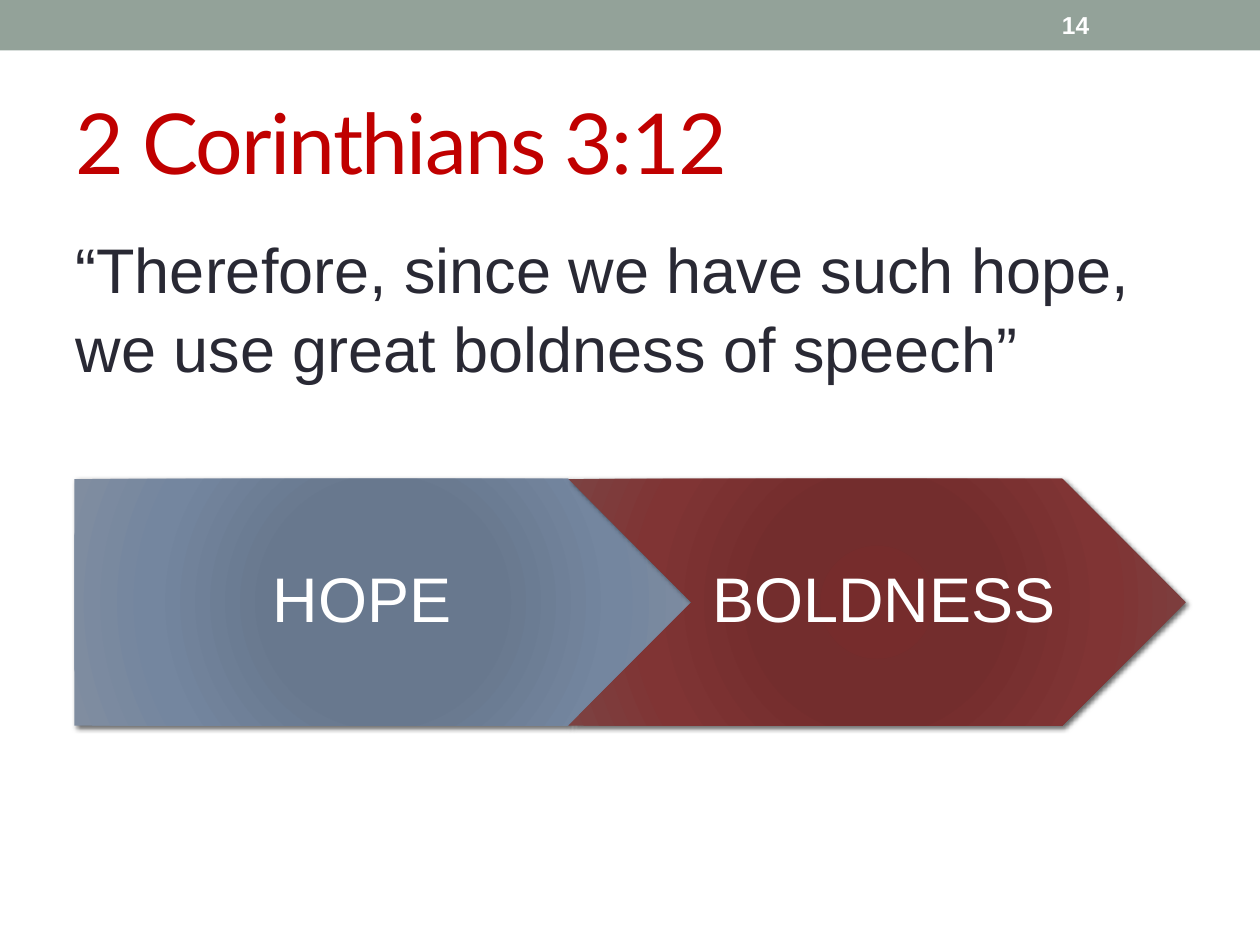
"""Build a scripture slide with a two-step arrow process."""
from dataclasses import dataclass

from lxml.etree import SubElement
from pptx import Presentation
from pptx.dml.color import RGBColor
from pptx.enum.shapes import MSO_SHAPE as Preset
from pptx.enum.text import MSO_ANCHOR as Anchor, PP_ALIGN as Align
from pptx.oxml import parse_xml
from pptx.oxml.ns import nsdecls, qn
from pptx.util import Inches, Pt


@dataclass(frozen=True)
class Theme:
    band: str = "93A299"
    title: str = "C00000"
    body: str = "292934"
    light: str = "FFFFFF"
    hope: tuple = ("677790", "68788E", "74869F", "808DA0")
    boldness: tuple = ("762C2C", "732D2D", "803434", "7C4242")
    stops: tuple = (0, 34, 70, 100)
    title_font: str = "Lato"
    font: str = "Arial"
    title_size: int = 48
    text_size: int = 36
    number_size: int = 14


THEME = Theme()
STEP_TOP, STEP_WIDTH, STEP_HEIGHT = 3.8, 4.9, 1.96


def place(shape, left, top, width, height):
    """Move and size a shape in inches."""
    box = {"left": left, "top": top, "width": width, "height": height}
    for name, value in box.items():
        setattr(shape, name, Inches(value))


def write(shape, text, size, color, font=THEME.font, bold=False,
          anchor=Anchor.MIDDLE, margins=(0.1, 0.05, 0.1, 0.05), **layout):
    """Put one formatted paragraph in a shape and return it."""
    frame = shape.text_frame
    frame.word_wrap = True
    frame.vertical_anchor = anchor
    for side, margin in zip(("left", "top", "right", "bottom"), margins):
        setattr(frame, f"margin_{side}", Inches(margin))
    paragraph = frame.paragraphs[0]
    for name, value in layout.items():
        setattr(paragraph, name, value)
    run = paragraph.add_run()
    run.text = text
    for name, value in {"name": font, "size": Pt(size), "bold": bold}.items():
        setattr(run.font, name, value)
    run.font.color.rgb = RGBColor.from_string(color)
    return paragraph


def add_text(shapes, box, *content, **formats):
    """Add a text box with one paragraph."""
    write(shapes.add_textbox(*map(Inches, box)), *content, **formats)


def add_band(slide):
    """Add the coloured band at the top with the slide number."""
    band = slide.shapes.add_shape(Preset.RECTANGLE, *map(Inches, (0, 0, 10, 0.4)))
    band.shadow.inherit = False
    band.fill.solid()
    band.fill.fore_color.rgb = RGBColor.from_string(THEME.band)
    band.line.fill.background()
    add_text(slide.shapes, (8.33, 0.02, 1.17, 0.36), "14",
             THEME.number_size, THEME.light, bold=True)


def add_title(slide, text):
    """Fill the title placeholder."""
    title = slide.shapes.title
    place(title, 0.5, 0.58, 9, 1.08)
    paragraph = write(title, text, THEME.title_size, THEME.title,
                      THEME.title_font, alignment=Align.LEFT)
    paragraph.runs[0].font._element.set("spc", "-100")


def add_verse(slide, text):
    """Fill the body placeholder with an unbulleted verse."""
    body = slide.placeholders[1]
    place(body, 0.5, 1.75, 9, 5.33)
    paragraph = write(body, text, THEME.text_size, THEME.body,
                      anchor=Anchor.TOP, line_spacing=1.05)
    properties = paragraph._p.get_or_add_pPr()
    for name in ("marL", "indent"):
        properties.set(name, "0")
    SubElement(properties, qn("a:buNone"))


def set_radial_fill(shape, colors):
    """Fill a shape with a circular gradient."""
    stops = "".join(
        f'<a:gs pos="{position * 1000}"><a:srgbClr val="{color}"/></a:gs>'
        for position, color in zip(THEME.stops, colors))
    sides = " ".join(f'{side}="100000"' for side in "ltrb")
    gradient = parse_xml(
        f'<a:gradFill {nsdecls("a")} rotWithShape="1"><a:gsLst>{stops}</a:gsLst>'
        f'<a:path path="circle"><a:fillToRect {sides}/></a:path></a:gradFill>')
    shape._element.spPr.find(qn("a:prstGeom")).addnext(gradient)


def set_shadow(shape):
    """Give a shape a soft shadow down and to the right."""
    shape.shadow.inherit = False
    shape._element.spPr.find(qn("a:effectLst")).append(parse_xml(
        f'<a:outerShdw {nsdecls("a")} blurRad="{Pt(3)}" dist="{Pt(2)}" '
        'dir="2700000" rotWithShape="0"><a:srgbClr val="000000">'
        '<a:alpha val="60000"/></a:srgbClr></a:outerShdw>'))


def add_step(group, preset, left, colors, text, text_left, text_width, inset):
    """Add one arrow of the process with its label."""
    arrow = group.shapes.add_shape(
        preset, *map(Inches, (left, STEP_TOP, STEP_WIDTH, STEP_HEIGHT)))
    arrow.line.fill.background()
    set_radial_fill(arrow, colors)
    set_shadow(arrow)
    add_text(group.shapes, (text_left, STEP_TOP, text_width, STEP_HEIGHT),
             text, THEME.text_size, THEME.light,
             margins=(inset, 0.1, 0.05, 0.1),
             alignment=Align.CENTER, line_spacing=0.9)


def main():
    """Build and save the slide."""
    presentation = Presentation()
    presentation.slide_width, presentation.slide_height = Inches(10), Inches(7.5)
    slide = presentation.slides.add_slide(presentation.slide_layouts[1])
    add_band(slide)
    add_title(slide, "2 Corinthians 3:12")
    add_verse(slide, "“Therefore, since we have such hope, "
                     "we use great boldness of speech”")
    process = slide.shapes.add_group_shape()
    add_step(process, Preset.PENTAGON, 0.59, THEME.hope,
             "HOPE", 0.59, 4.41, 0.21)
    add_step(process, Preset.CHEVRON, 4.51, THEME.boldness,
             "BOLDNESS", 5.49, 2.94, 0.16)
    presentation.save("out.pptx")


if __name__ == "__main__":
    main()
